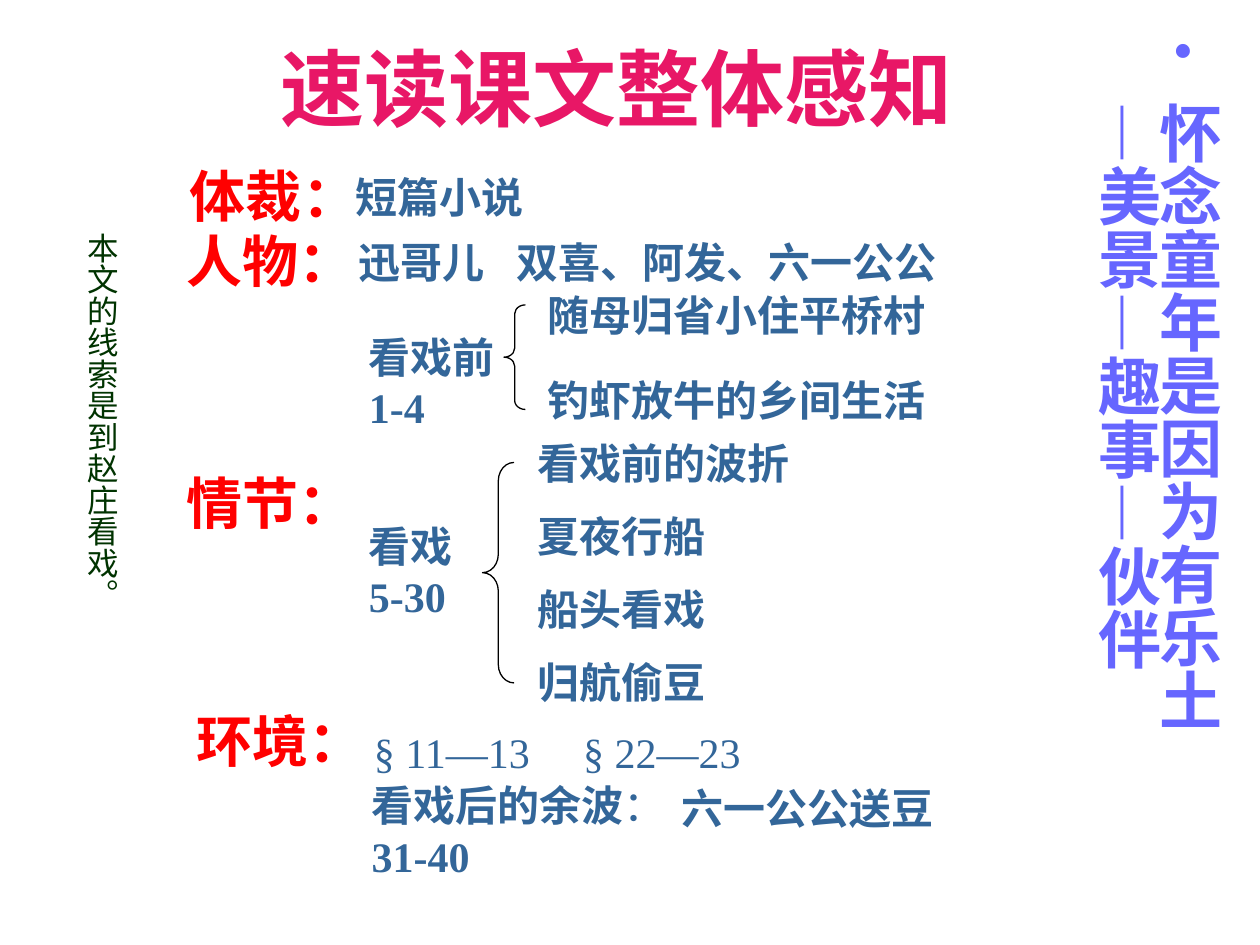
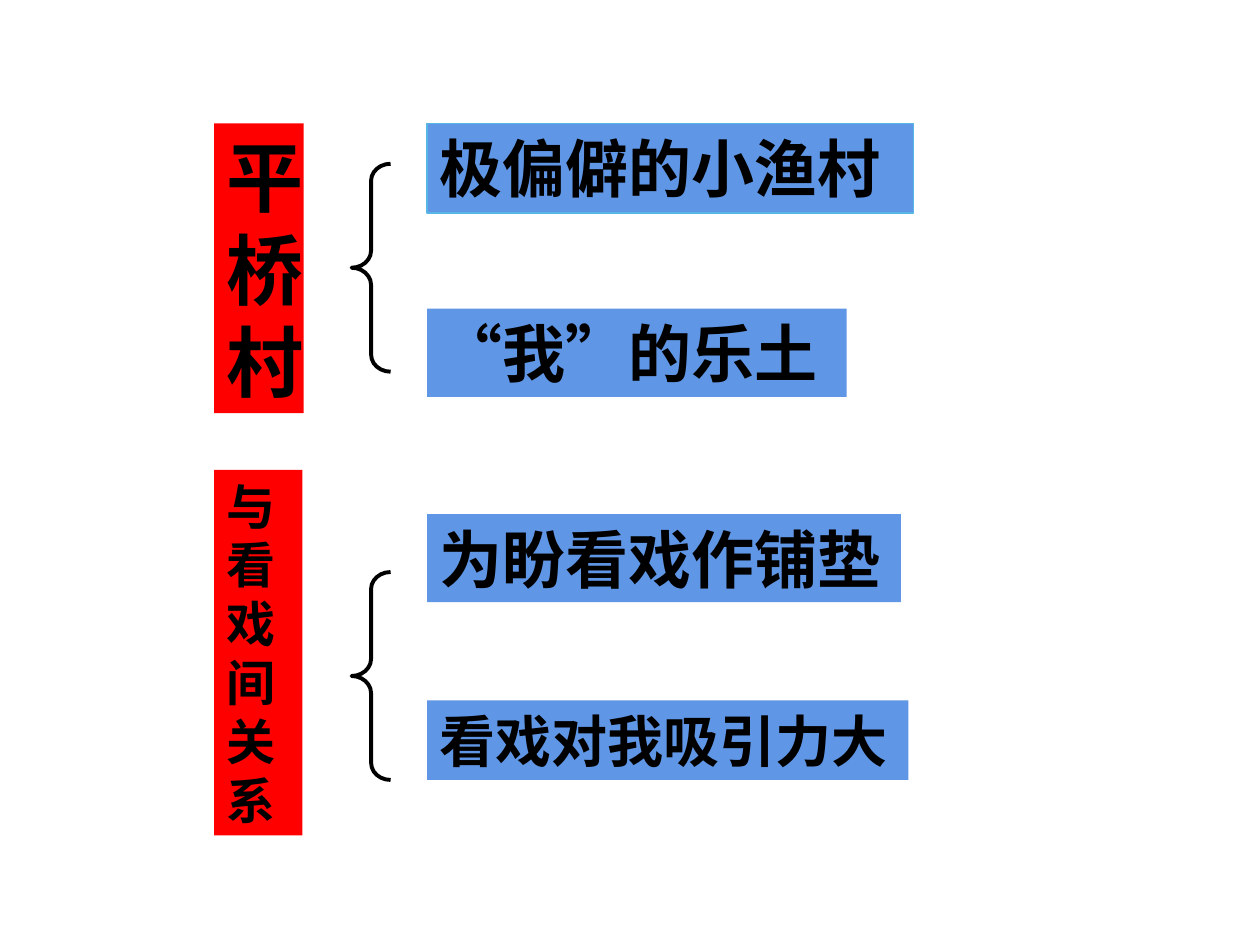
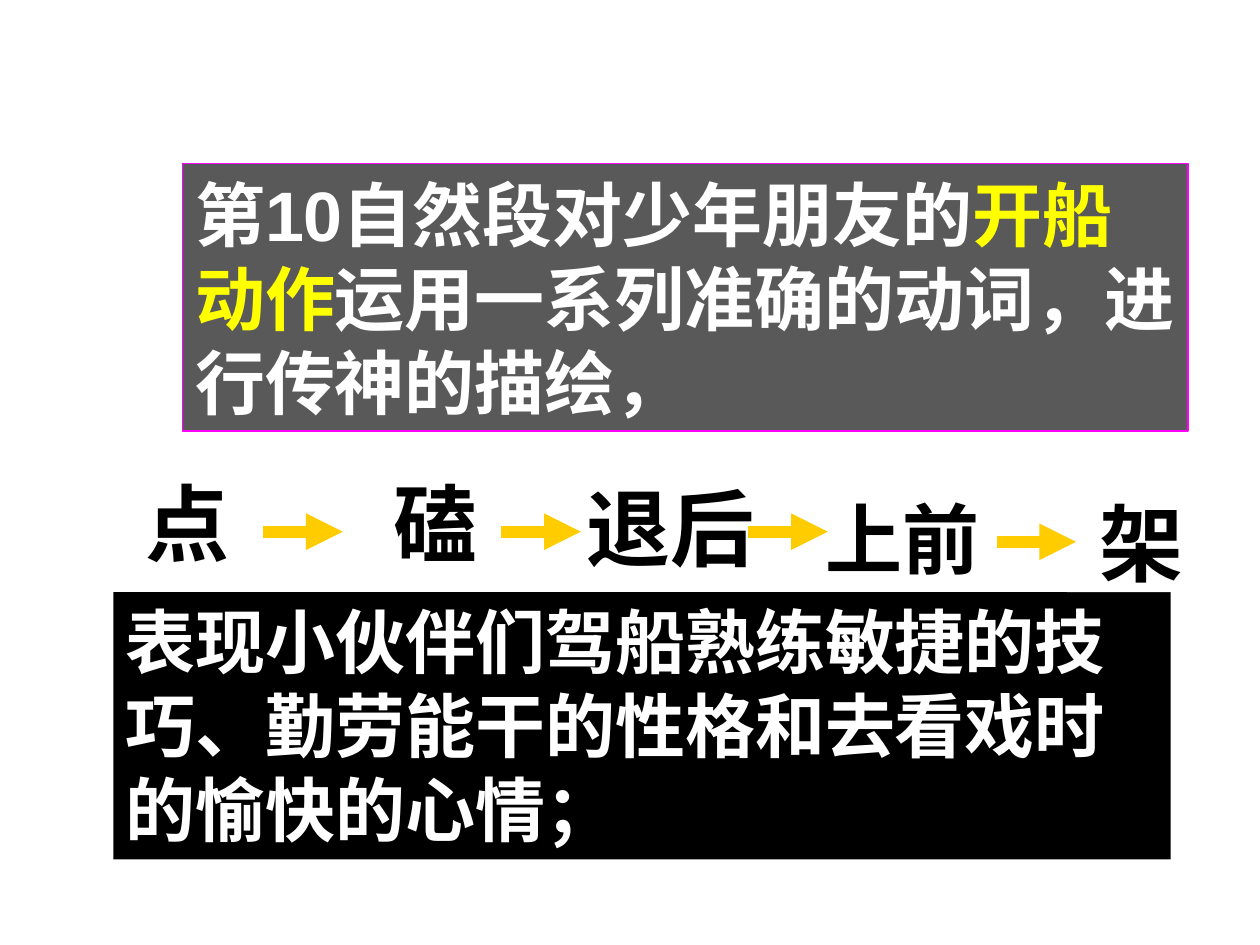
"""Build three lesson slides: reading overview, village diagram and chain of verbs."""
import dataclasses

import pptx
import pptx.dml.color
import pptx.enum.shapes
import pptx.enum.text
import pptx.oxml.ns
import pptx.util
from lxml import etree

Inches, Pt = pptx.util.Inches, pptx.util.Pt
SHAPES = pptx.enum.shapes.MSO_SHAPE
ANCHOR = pptx.enum.text.MSO_ANCHOR
ALIGN = pptx.enum.text.PP_ALIGN


@dataclasses.dataclass(frozen=True)
class Theme:
    serif: str = "Times New Roman"
    sans: str = "Arial"
    cjk: str = "Noto Sans CJK JP"
    title: str = "E81766"
    red: str = "FF0000"
    steel: str = "336699"
    green: str = "003300"
    violet: str = "6666FF"
    blue: str = "6096E6"
    edge: str = "58B6E5"
    magenta: str = "FF00FF"
    yellow: str = "FFFF00"
    gold: str = "FFCC00"
    black: str = "000000"
    white: str = "FFFFFF"
    tiny: int = 18
    body: int = 24
    note: int = 28
    label: int = 32
    large: int = 36
    quote: int = 40
    verb: int = 44
    heading: int = 48
    leading: float = 1.2
    tight: float = 1.02


THEME = Theme()

TITLE = "速读课文整体感知"
LABELS = [
    ("体裁：", 1.41, 1.23),
    ("人物：", 1.38, 1.75),
    ("情节：", 1.38, 3.67),
    ("环境：", 1.46, 5.56),
]
DETAILS = [
    ("迅哥儿", 2.75, 1.83),
    ("双喜、阿发、六一公公", 4, 1.83),
    ("看戏前\n1-4", 2.83, 2.58),
    ("看戏\n5-30", 2.83, 4.08),
    ("随母归省小住平桥村", 4.25, 2.25),
    ("钓虾放牛的乡间生活", 4.25, 2.92),
    ("六一公公送豆", 5.31, 6.16),
    ("短篇小说", 2.72, 1.31),
]
SCENES = ["看戏前的波折", "夏夜行船", "船头看戏", "归航偷豆"]
SECTIONS = [("§ 11—13", 2.87), ("§ 22—23", 4.53)]
AFTERMATH = [[("看戏后的余波", {}), ("：", {"bold": False})], [("31-40", {})]]
CLUE = "本文的线索是到赵庄看戏。"
THEME_LINE = "怀念童年是因为有乐土—美景—趣事—伙伴"
PLOT_BRACES = [(4, 2.42, 0.17, 0.83, 0.417), (3.83, 3.67, 0.25, 1.75, 0.583)]

TOPICS = [
    ("平桥村", 0.98, 0.71, 2.3, THEME.verb),
    ("与看戏间关系", 3.73, 0.7, 2.9, THEME.note),
]
POINTS = [
    ("极偏僻的小渔村", 0.98, 3.86, 0.71, THEME.large, {"line": THEME.edge}),
    ("“我”的乐土", 2.45, 3.33, 0.7, THEME.large, {"east": THEME.cjk}),
    ("为盼看戏作铺垫", 4.08, 3.76, 0.7, THEME.large, {}),
    ("看戏对我吸引力大", 5.56, 3.82, 0.63, THEME.label, {}),
]
BRACE_TOPS = [1.3, 4.54]

PASSAGE = [[("第10自然段对少年朋友的", {}), ("开船动作", {"color": THEME.yellow}),
            ("运用一系列准确的动词，进行传神的描绘，", {})]]
MEANING = "表现小伙伴们驾船熟练敏捷的技巧、勤劳能干的性格和去看戏时的愉快的心情；"
VERBS = [
    ("点", 0.9, 3.75, 1.18, 0.79, 0.375, THEME.heading),
    ("磕", 2.87, 3.75, 1.18, 0.79, 0.375, THEME.heading),
    ("退后", 4.61, 3.75, 1.42, 0.87, 0.409, THEME.heading),
    ("上前", 6.34, 3.91, 1.65, 0.71, 0.582, THEME.verb),
    ("架", 8.47, 3.91, 1.18, 0.79, 0.375, THEME.heading),
]
ARROWS = [(2.09, 4.22), (3.98, 4.22), (5.94, 4.22), (7.91, 4.3)]
ARROW_LENGTH = 0.63


def rgb(value):
    return pptx.dml.color.RGBColor.from_string(value)


def add_xml(parent, tag, **attributes):
    names = {key: str(value) for key, value in attributes.items()}
    return etree.SubElement(parent, pptx.oxml.ns.qn(tag), names)


def write(box, text, size=THEME.body, color=THEME.black, font=THEME.sans, east=None,
          bold=True, align=ALIGN.LEFT, anchor=ANCHOR.TOP, wrap=True,
          leading=THEME.leading, vertical=False, inset=None):
    """Fill a box with a string, or with paragraphs of (text, changes) pairs."""
    frame = box.text_frame
    frame.word_wrap = wrap
    frame.vertical_anchor = anchor
    if inset is not None:
        frame.margin_left = frame.margin_right = Inches(inset)
        frame.margin_top = frame.margin_bottom = Inches(inset)
    if vertical:
        frame._txBody.bodyPr.set("vert", "eaVert")
    lines = text
    if isinstance(text, str):
        lines = [[(line, {})] for line in text.split("\n")]
    for index, line in enumerate(lines):
        para = frame.add_paragraph() if index else frame.paragraphs[0]
        para.alignment = align
        para.space_before = Pt(0)
        para.line_spacing = Pt(size * leading)
        for words, changes in line:
            span = para.add_run()
            span.text = words
            span.font.name = font
            span.font.size = Pt(size)
            span.font.bold = changes.get("bold", bold)
            span.font.color.rgb = rgb(changes.get("color", color))
            add_xml(span.font._element, "a:ea", typeface=east or THEME.sans)
    return box


def add_text(page, text, left, top, width, height, **style):
    box = page.shapes.add_textbox(*map(Inches, (left, top, width, height)))
    return write(box, text, **style)


def add_figure(page, kind, left, top, width, height, fill=None, line=None, weight=0.75,
               adjust=()):
    shape = page.shapes.add_shape(kind, *map(Inches, (left, top, width, height)))
    shape.shadow.inherit = False
    for index, value in enumerate(adjust):
        shape.adjustments[index] = value
    if fill:
        shape.fill.solid()
        shape.fill.fore_color.rgb = rgb(fill)
    else:
        shape.fill.background()
    if line:
        shape.line.color.rgb = rgb(line)
        shape.line.width = Pt(weight)
    else:
        shape.line.fill.background()
    return shape


def add_brace(page, left, top, width, height, curve, weight):
    add_figure(page, SHAPES.LEFT_BRACE, left, top, width, height, line=THEME.black,
               weight=weight, adjust=(curve, 0.5))


def add_arrow(page, left, top):
    start, end, level = Inches(left), Inches(left + ARROW_LENGTH), Inches(top)
    arrow = page.shapes.add_connector(pptx.enum.shapes.MSO_CONNECTOR.STRAIGHT,
                                      start, level, end, level)
    arrow.line.color.rgb = rgb(THEME.gold)
    arrow.line.width = Pt(7)
    add_xml(arrow.line._get_or_add_ln(), "a:tailEnd", type="triangle")
    add_xml(arrow._element.spPr, "a:effectLst")


def build_overview(deck):
    page = deck.slides.add_slide(deck.slide_layouts[5])
    title = page.shapes.title
    title.left, title.top, title.width, title.height = map(Inches, (2.1, 0.24, 5.59, 0.99))
    write(title, TITLE, size=THEME.heading, color=THEME.title, font=THEME.cjk,
          east=THEME.cjk, align=ALIGN.CENTER, wrap=False)
    for text, left, top in LABELS:
        add_text(page, text, left, top, 1.9, 0.63, size=THEME.label, color=THEME.red,
                 font=THEME.serif)
    steel = {"color": THEME.steel, "font": THEME.serif}
    scenes = [(text, 4.17, 3.42 + 0.58 * row) for row, text in enumerate(SCENES)]
    for text, left, top in DETAILS + scenes:
        height = 0.9 if "\n" in text else 0.5
        add_text(page, text, left, top, 4 if height == 0.5 else 1.33, height, **steel)
    for text, left in SECTIONS:
        add_text(page, text, left, 5.72, 1.67, 0.5, bold=False, east=THEME.serif, **steel)
    add_text(page, AFTERMATH, 2.95, 6.19, 2.36, 0.8, inset=0, **steel)
    for brace in PLOT_BRACES:
        add_brace(page, *brace, weight=0.75)
    add_text(page, CLUE, 0.51, 1.75, 0.5, 3.13, size=THEME.tiny, color=THEME.green,
             bold=False, wrap=False, vertical=True)
    column = add_text(page, THEME_LINE, 8.4, 0.33, 1.29, 5.71, size=THEME.large,
                      color=THEME.violet, font=THEME.cjk, east=THEME.cjk,
                      leading=THEME.tight, vertical=True)
    settings = column.text_frame.paragraphs[0]._p.get_or_add_pPr()
    settings.set("marL", str(Inches(0.38)))
    settings.set("indent", str(-Inches(0.38)))
    add_xml(settings, "a:buSzPct", val=85000)
    add_xml(settings, "a:buChar", char="•")


def build_village(deck):
    page = deck.slides.add_slide(deck.slide_layouts[6])
    for text, top, width, height, size in TOPICS:
        topic = add_figure(page, SHAPES.RECTANGLE, 1.7, top, width, height, fill=THEME.red)
        write(topic, text, size=size)
    for text, top, width, height, size, extra in POINTS:
        point = add_figure(page, SHAPES.RECTANGLE, 3.39, top, width, height,
                           fill=THEME.blue, line=extra.get("line"))
        write(point, text, size=size, east=extra.get("east"))
    for top in BRACE_TOPS:
        add_brace(page, 2.79, top, 0.31, 1.65, 0.438, weight=2.25)


def build_verbs(deck):
    page = deck.slides.add_slide(deck.slide_layouts[6])
    passage = add_figure(page, SHAPES.RECTANGLE, 1.45, 1.3, 7.98, 2.12, fill=THEME.black,
                         line=THEME.magenta)
    add_xml(passage.fill._xPr.solidFill[0], "a:alpha", val=65000)
    write(passage, PASSAGE, size=THEME.quote, color=THEME.white, anchor=ANCHOR.MIDDLE)
    meaning = add_figure(page, SHAPES.RECTANGLE, 0.9, 4.7, 8.39, 2.12, fill=THEME.black)
    write(meaning, MEANING, size=THEME.quote, color=THEME.white)
    for text, left, top, width, height, slant, size in VERBS:
        verb = add_figure(page, SHAPES.PARALLELOGRAM, left, top, width, height,
                          fill=THEME.white, adjust=(slant,))
        write(verb, text, size=size, align=ALIGN.CENTER, anchor=ANCHOR.MIDDLE, wrap=False)
    for left, top in ARROWS:
        add_arrow(page, left, top)


def main():
    deck = pptx.Presentation()
    deck.slide_width, deck.slide_height = Inches(10), Inches(7.5)
    build_overview(deck)
    build_village(deck)
    build_verbs(deck)
    deck.save("out.pptx")


if __name__ == "__main__":
    main()
